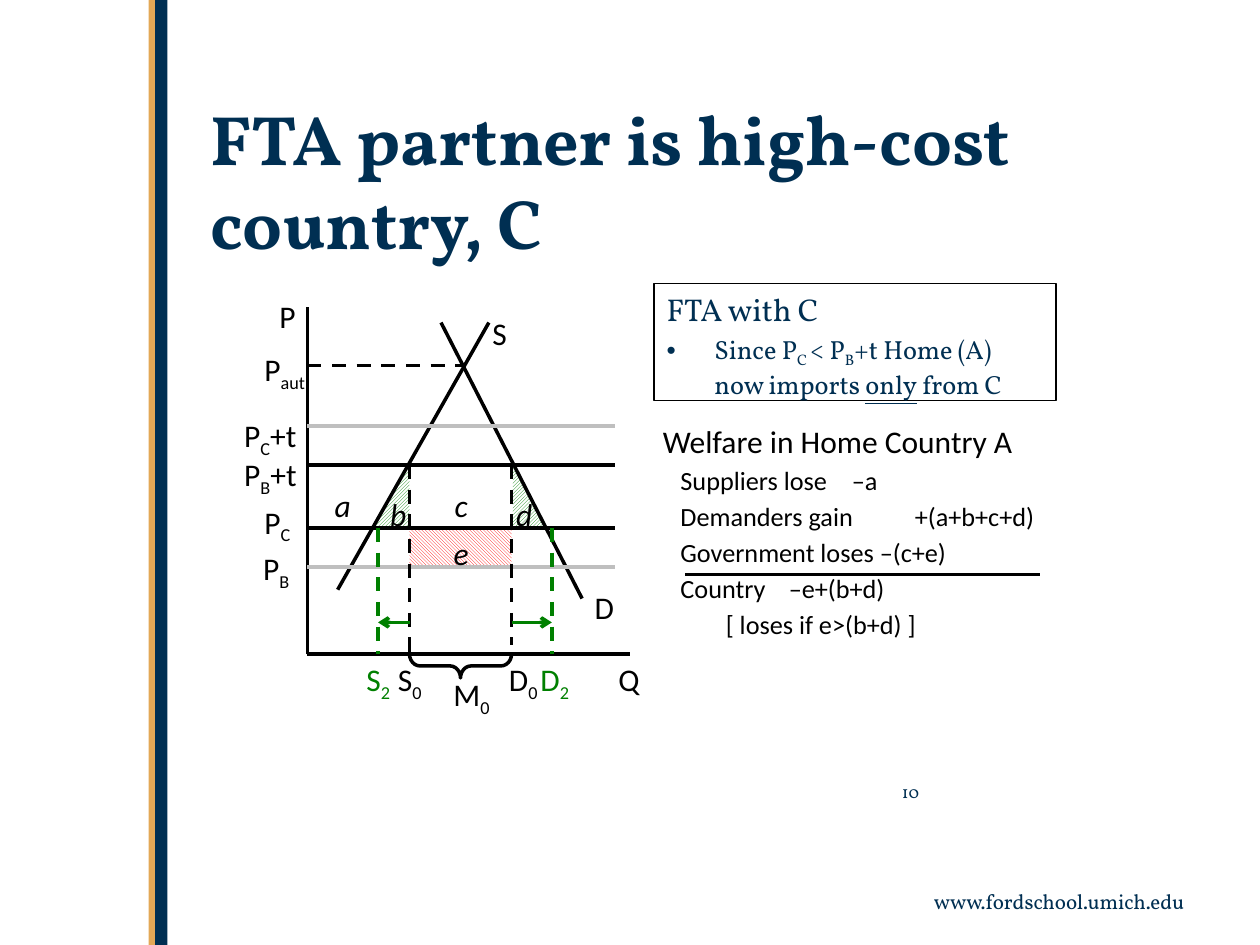
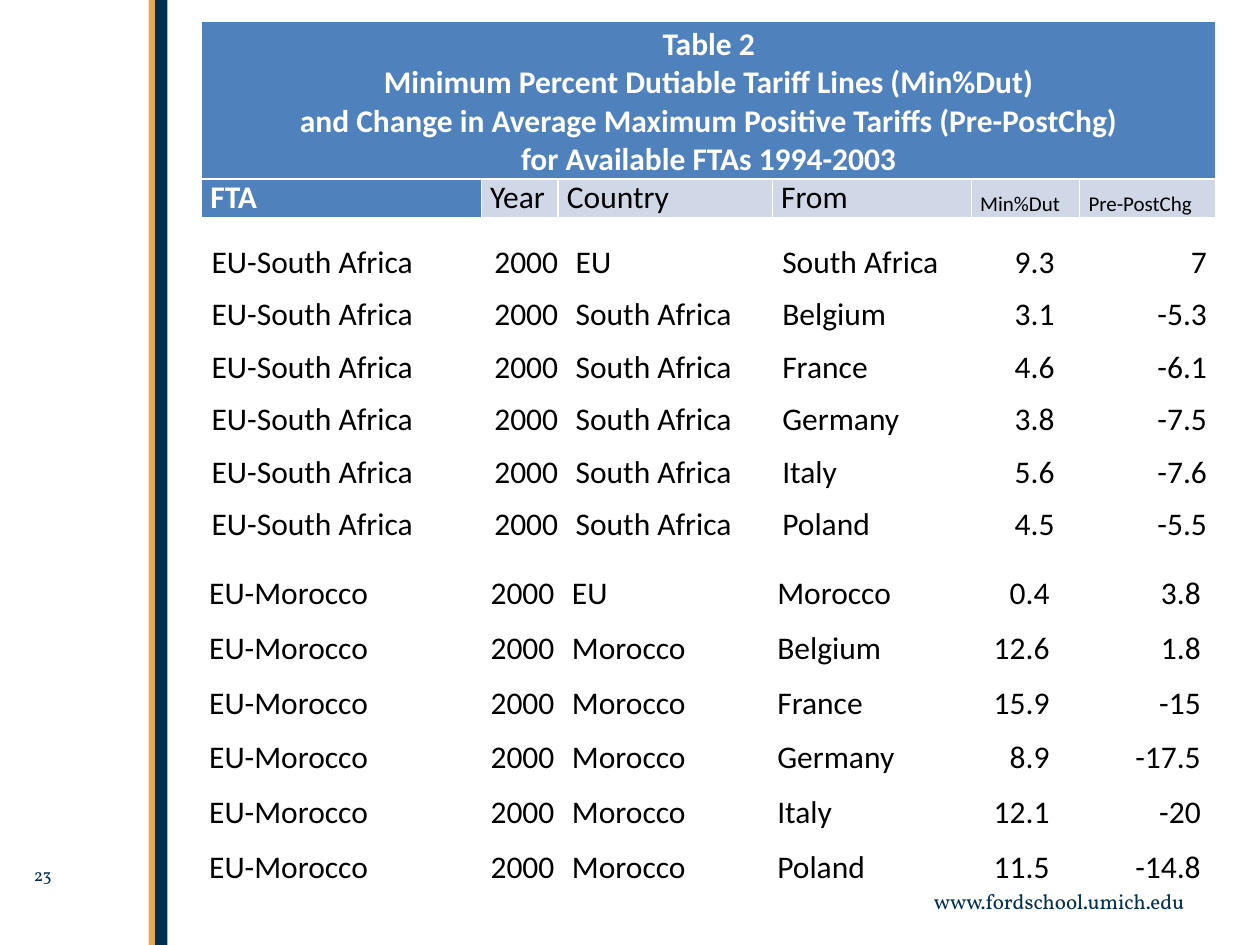
from dataclasses import dataclass

from lxml import etree
from pptx import Presentation
from pptx.dml.color import RGBColor
from pptx.enum.dml import MSO_LINE, MSO_PATTERN
from pptx.enum.shapes import MSO_CONNECTOR, MSO_SHAPE
from pptx.enum.text import MSO_ANCHOR, MSO_AUTO_SIZE, PP_ALIGN
from pptx.oxml.ns import qn
from pptx.util import Inches, Pt


@dataclass(frozen=True)
class Theme:
    navy: str = "002F52"
    gold: str = "E3A856"
    black: str = "000000"
    white: str = "FFFFFF"
    gray: str = "BFBFBF"
    green: str = "008000"
    red: str = "FF0000"
    blue: str = "4F81BD"
    pale: str = "D0D8E8"
    serif: str = "Vollkorn"
    sans: str = "Calibri"
    head: float = 40
    text: float = 18
    item: float = 15
    foot: float = 12
    page: float = 10
    rule: float = 2


def color(code):
    return RGBColor.from_string(code)


def box(at):
    return [Inches(n) for n in at]


def add(parent, tag, **attrs):
    return etree.SubElement(parent, qn(tag), attrs)


class Deck:
    def __init__(self, theme):
        self.theme = theme
        self.prs = Presentation()
        self.prs.slide_width, self.prs.slide_height = Inches(10), Inches(7.5)
        self.slide = None

    def start(self, layout, page, at):
        """Begin a slide with its bands, web address and page number."""
        t = self.theme
        self.slide = self.prs.slides.add_slide(self.prs.slide_layouts[layout])
        self.shape(MSO_SHAPE.RECTANGLE, (1.23, 0, 0.1, 7.5), fill=t.navy)
        self.shape(MSO_SHAPE.RECTANGLE, (1.18, 0, 0.05, 7.5), fill=t.gold)
        brand = dict(face=t.serif, tint=t.navy)
        self.label("www.fordschool.umich.edu", (7, 7, 2.5, 0.3),
                   size=t.foot, align=PP_ALIGN.RIGHT, **brand)
        self.label(page, at, size=t.page, **brand)

    def put(self, para, text, size=None, tint=None, face=None,
            bold=False, italic=False, align=None):
        """Pieces split at | ; a leading _ lowers one, a leading ~ underlines it."""
        t = self.theme
        para.alignment = align
        for piece in text.split("|"):
            run = para.add_run()
            run.text = piece.lstrip("_~")
            font = run.font
            font.name, font.size = face or t.sans, Pt(size or t.text)
            font.color.rgb = color(tint or t.black)
            font.bold, font.italic = bold, italic
            if piece.startswith("_"):
                run._r.get_or_add_rPr().set("baseline", "-25000")
            if piece.startswith("~"):
                font.underline = True

    def frame(self, shape):
        frame = shape.text_frame
        frame.word_wrap = True
        frame.auto_size = MSO_AUTO_SIZE.NONE
        frame.vertical_anchor = MSO_ANCHOR.TOP
        return frame

    def label(self, text, at, **style):
        frame = self.frame(self.slide.shapes.add_textbox(*box(at)))
        self.put(frame.paragraphs[0], text, **style)
        return frame

    def holder(self, index, at):
        shape = self.slide.placeholders[index]
        shape.left, shape.top, shape.width, shape.height = box(at)
        return shape, self.frame(shape)

    def shape(self, kind, at, fill=None, hatch=None, line=None, flip=False):
        shape = self.slide.shapes.add_shape(kind, *box(at))
        shape.shadow.inherit = False
        if fill:
            shape.fill.solid()
            shape.fill.fore_color.rgb = color(fill)
        elif hatch:
            shape.fill.patterned()
            shape.fill.pattern, fore = hatch
            shape.fill.fore_color.rgb = color(fore)
            shape.fill.back_color.rgb = color(self.theme.white)
        else:
            shape.fill.background()
        if line:
            shape.line.color.rgb = color(line)
            shape.line.width = Pt(self.theme.rule)
        else:
            shape.line.fill.background()
        if flip:
            shape._element.spPr.find(qn("a:xfrm")).set("flipH", "1")
        return shape

    def line(self, x1, y1, x2, y2, tint=None, dash=False, arrow=False):
        link = self.slide.shapes.add_connector(
            MSO_CONNECTOR.STRAIGHT, *box((x1, y1, x2, y2)))
        link.line.color.rgb = color(tint or self.theme.black)
        link.line.width = Pt(self.theme.rule)
        if dash:
            link.line.dash_style = MSO_LINE.DASH
        if arrow:
            add(link._element.spPr.find(qn("a:ln")), "a:tailEnd", type="arrow")
        add(link._element.spPr, "a:effectLst")

    def table(self, at, cols, count):
        grid = self.slide.shapes.add_table(count, len(cols), *box(at)).table
        grid.horz_banding = False
        for col, width in zip(grid.columns, cols):
            col.width = Inches(width)
        for row in grid.rows:
            row.height = Inches(at[3] / count)
        return grid

    def cell(self, cell, lines, fill=None, **style):
        cell.vertical_anchor = MSO_ANCHOR.BOTTOM
        cell.margin_left = cell.margin_right = Inches(0.07)
        cell.margin_top = cell.margin_bottom = 0
        if fill:
            cell.fill.solid()
            cell.fill.fore_color.rgb = color(fill)
        else:
            cell.fill.background()
        frame = cell.text_frame
        for i, text in enumerate(lines):
            para = frame.add_paragraph() if i else frame.paragraphs[0]
            self.put(para, text, **style)


def diagram(deck):
    t = deck.theme
    left, base, end = 2.44, 5.19, 4.88
    s2, s0, d0, d2 = 3, 3.25, 4.06, 4.38
    aut, ct, bt, pc, pb = 2.9, 3.38, 3.69, 4.19, 4.5

    # Welfare areas b, d and e
    up = (MSO_PATTERN.DARK_UPWARD_DIAGONAL, t.green)
    down = (MSO_PATTERN.DARK_DOWNWARD_DIAGONAL, t.red)
    corner = MSO_SHAPE.RIGHT_TRIANGLE
    deck.shape(corner, (2.98, 3.7, 0.27, 0.48), hatch=up, flip=True)
    deck.shape(corner, (4.07, 3.67, 0.27, 0.52), hatch=up)
    deck.shape(MSO_SHAPE.RECTANGLE, (s0, pc, d0 - s0, pb - pc), hatch=down)

    # Axes, demand and supply
    deck.line(left, base, 5, base)
    deck.line(left, base, left, 2.44)
    deck.line(4.62, 4.75, 3.5, 2.56)
    deck.line(2.68, 4.68, 3.88, 2.56)

    # Price levels
    deck.line(left, aut, 3.69, aut, dash=True)
    for y, tint in ((pb, t.gray), (pc, t.black), (bt, t.black), (ct, t.gray)):
        deck.line(left, y, end, y, tint)

    # Quantities before and after, with the shifts
    deck.line(d0, bt, d0, 5.12, dash=True)
    deck.line(s0, bt, s0, base, dash=True)
    for old, new in ((s0, s2), (d0, d2)):
        deck.line(new, pc, new, base, t.green, dash=True)
        deck.line(old, 4.94, new, 4.94, t.green, arrow=True)
    brace = deck.shape(MSO_SHAPE.LEFT_BRACE, (3.56, 4.88, 0.19, 0.81), line=t.black)
    brace.rotation = 270
    brace.adjustments[0] = 0.44

    # Labels
    for text, x, y, wide in (
            ("P", 2.12, 2.31, 0.56), ("S", 3.81, 2.44, 0.56),
            ("P|_aut", 2, 2.73, 0.56), ("P|_C|+t", 1.84, 3.25, 0.66),
            ("P|_B|+t", 1.84, 3.56, 0.66), ("P|_C", 2, 3.94, 0.5),
            ("P|_B", 1.99, 4.31, 0.51), ("D", 4.62, 4.62, 0.31),
            ("Q", 4.81, base, 0.56), ("S|_0", 3.06, base, 0.45),
            ("D|_0", 3.94, base, 0.51), ("M|_0", 3.5, 5.31, 0.54)):
        deck.label(text, (x, y, wide, 0.4))
    for text, x in (("S|_2", 2.81), ("D|_2", 4.19)):
        deck.label(text, (x, base, 0.52, 0.4), tint=t.green)
    for text, x, y in (("a", 2.44, 3.81), ("b", 2.88, 3.88), ("c", 3.38, 3.81),
                       ("d", 3.88, 3.88), ("e", 3.38, 4.19)):
        deck.label(text, (x, y, 0.56, 0.4), italic=True, align=PP_ALIGN.CENTER)


def partner(deck):
    t = deck.theme
    deck.start(1, "10", (7.06, 6.15, 2.25, 0.3))
    brand = dict(face=t.serif, tint=t.navy)

    # Title
    _, frame = deck.holder(0, (1.57, 0.71, 7.92, 1.23))
    deck.put(frame.paragraphs[0], "FTA partner is high-cost country, C",
             size=t.head, bold=True, align=PP_ALIGN.LEFT, **brand)

    diagram(deck)

    # Agreement box
    shape, frame = deck.holder(1, (5.19, 2.25, 3.19, 0.93))
    shape.line.color.rgb = color(t.black)
    shape.line.width = Pt(0.75)
    first, second = frame.paragraphs[0], frame.add_paragraph()
    for para, hang in ((first, 0), (second, Inches(0.38))):
        props = para._p.get_or_add_pPr()
        props.set("marL", str(hang))
        props.set("indent", str(-hang))
        if hang:
            add(props, "a:buChar", char="•")
        else:
            add(props, "a:buNone")
    first.space_before, second.space_before = Pt(0), Pt(3)
    deck.put(first, "FTA with C", **brand)
    deck.put(second, "Since P|_C |< P|_B|+t Home (A) now imports |~only| from C",
             size=t.item, **brand)

    # Welfare account: text, first-line indent, tab stop
    frame = deck.label("Welfare in Home Country A", (5.19, 3.31, 3.19, 1.88))
    frame.margin_left = frame.margin_right = Inches(0.07)
    frame.margin_top = frame.margin_bottom = Inches(0.04)
    for text, inset, stop in (
            ("Suppliers lose\t–a", 0.14, 1.64),
            ("Demanders gain\t+(a+b+c+d)", 0.14, 1.64),
            ("Government loses –(c+e)", 0.14, None),
            ("Country\t–e+(b+d)", 0.14, 1.25),
            ("[ loses if e>(b+d) ]", 0.5, None)):
        para = frame.add_paragraph()
        props = para._p.get_or_add_pPr()
        props.set("indent", str(Inches(inset)))
        if stop:
            add(add(props, "a:tabLst"), "a:tab", pos=str(Inches(stop)), algn="l")
        para.space_before = Pt(2.6)
        deck.put(para, text, size=t.item)
    deck.line(5.44, 4.56, 8.25, 4.56)


def tariffs(deck):
    t = deck.theme
    deck.start(6, "23", (0.17, 6.81, 0.92, 0.34))

    # Heading table
    grid = deck.table((1.6, 0.17, 8.06, 1.55), (2.22, 0.61, 1.7, 1.58, 0.86, 1.08), 2)
    grid.rows[0].height, grid.rows[1].height = Inches(1.25), Inches(0.3)
    grid.cell(0, 0).merge(grid.cell(0, 5))
    lines = ("Table 2",
             "Minimum Percent Dutiable Tariff Lines (Min%Dut)",
             "and Change in Average Maximum Positive Tariffs (Pre-PostChg)",
             "for Available FTAs 1994-2003")
    strong = dict(fill=t.blue, tint=t.white, bold=True)
    deck.cell(grid.cell(0, 0), lines, align=PP_ALIGN.CENTER, **strong)
    heads = ("FTA", "Year", "Country", "From", "Min%Dut", "Pre-PostChg")
    for c, head in enumerate(heads):
        style = dict(fill=t.pale, size=t.foot if c > 3 else t.text) if c else strong
        deck.cell(grid.cell(1, c), [head], **style)

    # One table for each agreement
    members = ("Belgium", "France", "Germany", "Italy", "Poland")
    for name, at, cols, lows, shifts in (
            ("South Africa", (1.61, 1.82, 8.04, 2.5),
             (2.22, 0.67, 1.64, 1.58, 0.72, 1.21),
             (9.3, 3.1, 4.6, 3.8, 5.6, 4.5), (7, -5.3, -6.1, -7.5, -7.6, -5.5)),
            ("Morocco", (1.59, 4.43, 8.02, 2.61),
             (2.21, 0.67, 1.63, 1.58, 0.72, 1.2),
             (0.4, 12.6, 15.9, 8.9, 12.1, 11.5), (3.8, 1.8, -15, -17.5, -20, -14.8))):
        grid = deck.table(at, cols, len(lows))
        grid.first_row = False
        pairs = [("EU", name)] + [(name, member) for member in members]
        for r, (pair, low, shift) in enumerate(zip(pairs, lows, shifts)):
            for c, value in enumerate(("EU-" + name, 2000, *pair, low, shift)):
                side = PP_ALIGN.LEFT if isinstance(value, str) else PP_ALIGN.RIGHT
                deck.cell(grid.cell(r, c), [str(value)], align=side)


def main():
    deck = Deck(Theme())
    partner(deck)
    tariffs(deck)
    deck.prs.save("out.pptx")


if __name__ == "__main__":
    main()
